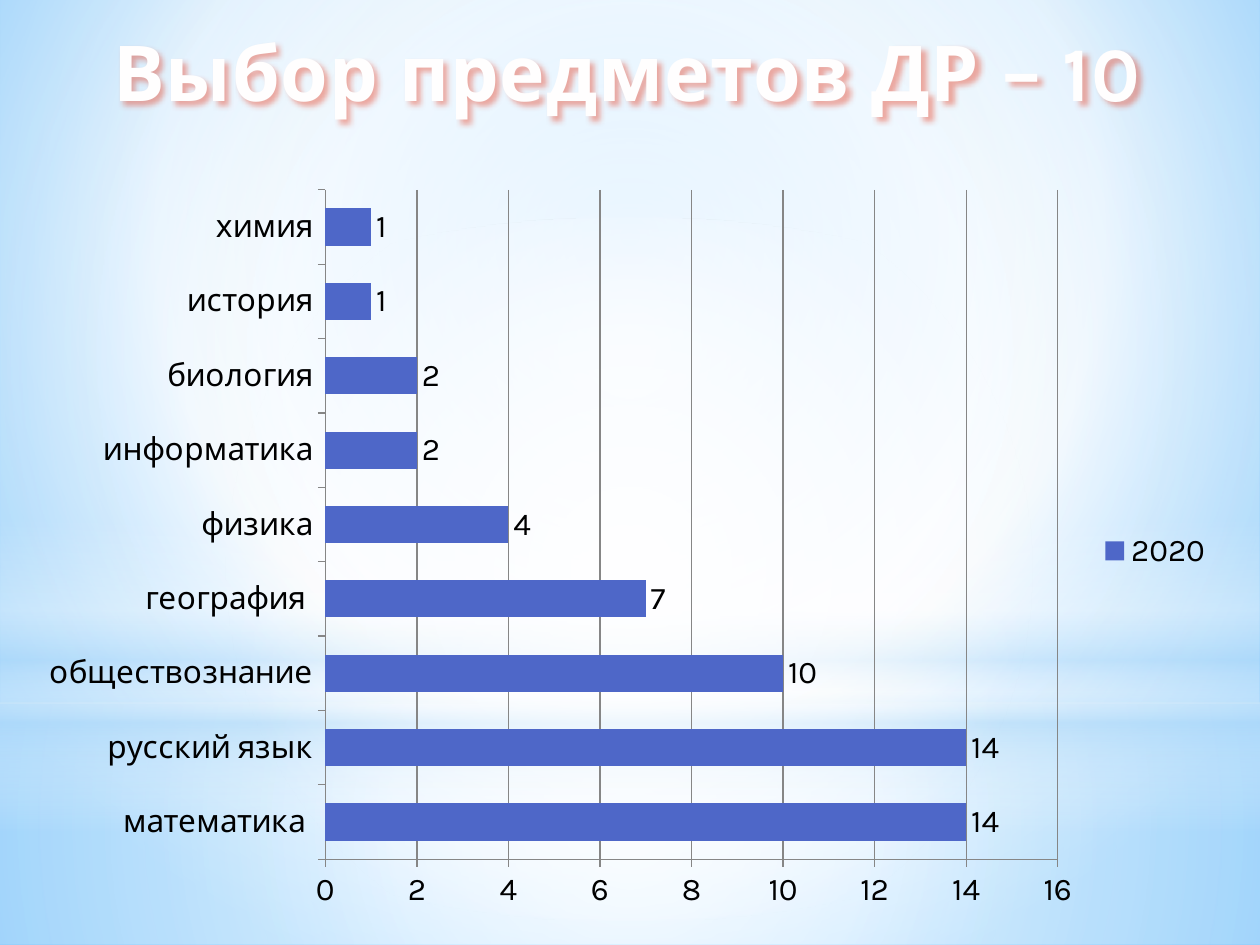
from lxml import etree
from pptx import Presentation
from pptx.chart.data import CategoryChartData
from pptx.dml.color import RGBColor
from pptx.enum.chart import XL_CHART_TYPE, XL_LABEL_POSITION, XL_LEGEND_POSITION, XL_TICK_MARK
from pptx.enum.shapes import MSO_SHAPE
from pptx.enum.text import MSO_ANCHOR, MSO_AUTO_SIZE, PP_ALIGN
from pptx.oxml import parse_xml
from pptx.oxml.ns import nsdecls, qn
from pptx.util import Inches, Pt

BAR = XL_CHART_TYPE.BAR_CLUSTERED
OUTSIDE = XL_TICK_MARK.OUTSIDE
OUTSIDE_END = XL_LABEL_POSITION.OUTSIDE_END
RIGHT = XL_LEGEND_POSITION.RIGHT
RECT, OVAL = MSO_SHAPE.RECTANGLE, MSO_SHAPE.OVAL
MIDDLE, CENTER = MSO_ANCHOR.MIDDLE, PP_ALIGN.CENTER
FIT_SHAPE = MSO_AUTO_SIZE.SHAPE_TO_FIT_TEXT

COLORS = {"white": "FFFFFF", "sky": "9ED5FF", "deep": "5BB9FF", "pale": "B4DCFA",
          "title": "FFFEFE", "red": "E73214", "bar": "4E67C8", "text": "000000", "line": "868686"}
FONT = "Karla"
CENTRE = (50, 50, 50, 50)
SUBJECTS = {"математика ": 14, "русский язык": 14, "обществознание": 10, "география ": 7, "физика": 4,
            "информатика": 2, "биология": 2, "история": 1, "химия": 1}


class Deck:
    def __init__(self, prs):
        self.prs = prs
        self.s = prs.slides.add_slide(prs.slide_layouts[5])

    def color(self, name):
        return RGBColor.from_string(COLORS[name])

    def box(self, x, y, w, h):
        width, height = self.prs.slide_width, self.prs.slide_height
        return [round(v) for v in (x * width, y * height, w * width, h * height)]

    def gradient(self, parent, stops, to=None):
        gs = "".join(f'<a:gs pos="{pos * 1000}"><a:srgbClr val="{COLORS[name]}">'
                     f'<a:alpha val="{alpha * 1000}"/></a:srgbClr></a:gs>' for pos, name, alpha in stops)
        if to:
            sides = " ".join(f'{side}="{v * 1000}"' for side, v in zip("ltrb", to))
            way = f'<a:path path="circle"><a:fillToRect {sides}/></a:path>'
        else:
            way = '<a:lin ang="5400000" scaled="0"/>'
        grad = parse_xml(f'<a:gradFill {nsdecls("a")} rotWithShape="1"><a:gsLst>{gs}</a:gsLst>{way}</a:gradFill>')
        solid = parent.find(qn("a:solidFill"))
        parent.replace(solid, grad)

    def background(self, stops, to):
        self.s.background.fill.solid()
        self.s.background.fill.fore_color.rgb = self.color("white")
        self.gradient(self.s.background._cSld.bg.bgPr, stops, to)

    def glow(self, kind, place, stops, to=None):
        sp = self.s.shapes.add_shape(kind, *self.box(*place))
        sp.shadow.inherit = False
        sp.line.fill.background()
        sp.fill.solid()
        self.gradient(sp._element.spPr, stops, to)

    def title(self, text, place):
        sp = self.s.shapes.title
        sp.left, sp.top, sp.width, sp.height = self.box(*place)
        self.s.shapes._spTree.append(sp._element)
        tf = sp.text_frame
        tf.text = text
        tf.word_wrap = True
        tf.auto_size = FIT_SHAPE
        tf.vertical_anchor = MIDDLE
        p = tf.paragraphs[0]
        p.alignment = CENTER
        font = p.runs[0].font
        font.name, font.size, font.bold = FONT, Pt(44), True
        font.color.rgb = self.color("title")
        font._element.set("spc", "50")
        sp._element.spPr.append(parse_xml(
            f'<a:effectLst {nsdecls("a")}><a:outerShdw blurRad="38100" dist="30000" dir="2700000">'
            f'<a:srgbClr val="{COLORS["red"]}"><a:alpha val="40000"/></a:srgbClr></a:outerShdw></a:effectLst>'))

    def bar_chart(self, name, values, place, plot_area):
        data = CategoryChartData()
        data.categories = list(values)
        data.add_series(name, list(values.values()))
        chart = self.s.shapes.add_chart(BAR, *self.box(*place), data).chart
        chart.has_title = False
        chart.font.name, chart.font.size = FONT, Pt(18)
        chart.font.color.rgb = self.color("text")
        chart.has_legend = True
        chart.legend.position = RIGHT
        chart.legend.include_in_layout = False
        for axis in (chart.category_axis, chart.value_axis):
            axis.major_tick_mark = OUTSIDE
            axis.format.line.color.rgb = self.color("line")
        axis = chart.value_axis
        axis.minimum_scale, axis.maximum_scale, axis.major_unit = 0, 16, 2
        axis.has_major_gridlines = True
        axis.major_gridlines.format.line.color.rgb = self.color("line")
        plot = chart.plots[0]
        plot.gap_width = 100
        plot.vary_by_categories = False
        fill = plot.series[0].format.fill
        fill.solid()
        fill.fore_color.rgb = self.color("bar")
        plot.has_data_labels = True
        plot.data_labels.show_value = True
        plot.data_labels.position = OUTSIDE_END
        self.layout(chart._chartSpace.chart.plotArea, plot_area)

    def layout(self, area, plot_area):
        for old in area.findall(qn("c:layout")):
            area.remove(old)
        outer = etree.Element(qn("c:layout"))
        manual = etree.SubElement(outer, qn("c:manualLayout"))
        settings = [("layoutTarget", "inner"), ("xMode", "edge"), ("yMode", "edge"), *zip("xywh", plot_area)]
        for tag, value in settings:
            etree.SubElement(manual, qn(f"c:{tag}")).set("val", str(value))
        area.insert(0, outer)


def main():
    prs = Presentation()
    prs.slide_width, prs.slide_height = Inches(10), Inches(7.5)
    deck = Deck(prs)
    deck.background([(0, "sky", 100), (60, "white", 100), (100, "deep", 100)], (20, 10, 20, 60))
    horizon = 0.744
    deck.glow(RECT, (0, horizon, 1, 1 - horizon),
              [(0, "white", 91), (37, "white", 76), (100, "pale", 79)], CENTRE)
    deck.glow(RECT, (0, 0, 1, horizon),
              [(0, "white", 89), (48, "white", 62), (100, "pale", 79)], CENTRE)
    deck.glow(RECT, (0, 0.55, 1, 0.33),
              [(0, "white", 0), (29, "white", 30), (45, "pale", 40),
               (55, "white", 26), (65, "pale", 60), (100, "white", 0)])
    deck.glow(OVAL, (0, 0.23, 1, horizon), [(0, "white", 100), (56, "white", 0)], CENTRE)
    deck.title("Выбор предметов ДР – 10", (-0.02, 0.02, 1.035, 0.11))
    deck.bar_chart("2020", SUBJECTS, (0.02, 0.185, 0.953, 0.796), (0.25, 0.02, 0.61, 0.89))
    prs.save("out.pptx")


if __name__ == "__main__":
    main()
